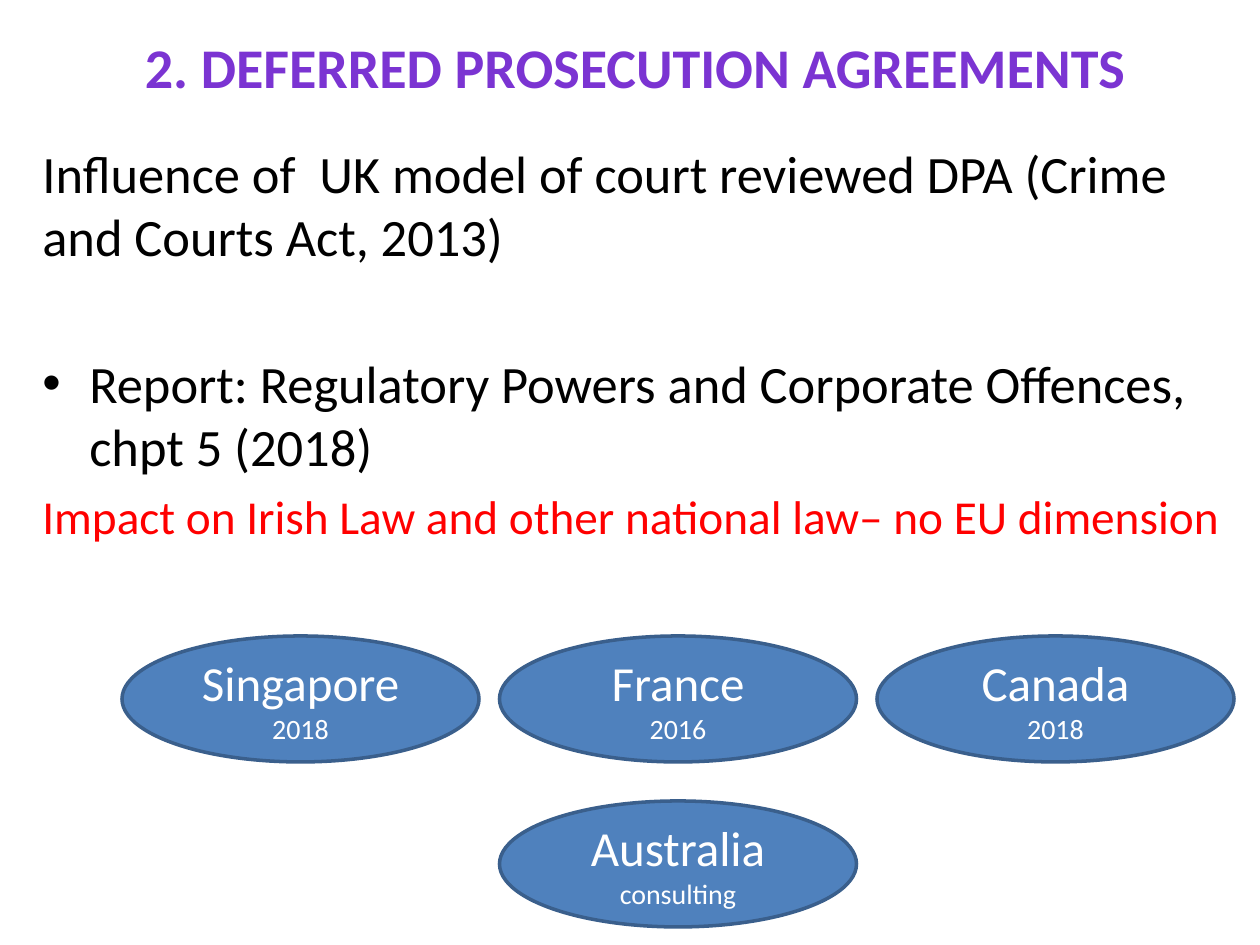
from dataclasses import dataclass

from lxml.etree import SubElement
from pptx import Presentation
from pptx.dml.color import RGBColor
from pptx.enum.shapes import MSO_SHAPE
from pptx.enum.text import MSO_ANCHOR, PP_ALIGN
from pptx.oxml.ns import qn
from pptx.util import Pt

SCALE = 914400 / 126


@dataclass(frozen=True)
class Theme:
    """Colours and type sizes of the slide."""
    font: str = "Calibri"
    ink: str = "000000"
    title: str = "7B34D2"
    alert: str = "FF0000"
    fill: str = "4F81BD"
    edge: str = "3A5F8C"
    light: str = "FFFFFF"
    head: int = 32
    body: int = 30
    note: int = 27
    name: int = 28
    year: int = 16


THEME = Theme()


def emu(*sizes):
    """Turn px lengths into EMU."""
    return [round(size * SCALE) for size in sizes]


def write(frame, text, size, color, bold=False, align=PP_ALIGN.LEFT, before=0, hang=0):
    """Add one formatted paragraph, bulleted when it has a hanging indent."""
    para = frame.paragraphs[0]
    if para.runs:
        para = frame.add_paragraph()
    para.alignment = align
    para.space_before = Pt(before)
    run = para.add_run()
    run.text = text
    font = run.font
    font.name, font.size, font.bold = THEME.font, Pt(size), bold
    font.color.rgb = RGBColor.from_string(color)
    if hang:
        indent = emu(hang)[0]
        props = para._p.get_or_add_pPr()
        props.set("marL", str(indent))
        props.set("indent", str(-indent))
        SubElement(props, qn("a:buFont"), typeface="Arial")
        SubElement(props, qn("a:buChar"), char="•")


def frame_at(slide, box):
    """Add a wrapping text box and return its frame."""
    frame = slide.shapes.add_textbox(*emu(*box)).text_frame
    frame.word_wrap = True
    return frame


def add_title(slide, box):
    """Place the centred heading."""
    write(frame_at(slide, box), "2. DEFERRED PROSECUTION AGREEMENTS", THEME.head,
          THEME.title, bold=True, align=PP_ALIGN.CENTER)


def add_body(slide, box):
    """Place the main points."""
    frame = frame_at(slide, box)
    write(frame, "Influence of  UK model of court reviewed DPA (Crime and Courts Act, 2013)",
          THEME.body, THEME.ink)
    write(frame, "Report: Regulatory Powers and Corporate Offences, chpt 5 (2018)",
          THEME.body, THEME.ink, before=48, hang=47)
    write(frame, "Impact on Irish Law and other national law– no EU dimension",
          THEME.note, THEME.alert, before=6)


def add_oval(slide, box, name, year):
    """Place one country oval with its status line."""
    oval = slide.shapes.add_shape(MSO_SHAPE.OVAL, *emu(*box))
    oval.shadow.inherit = False
    oval.fill.solid()
    oval.fill.fore_color.rgb = RGBColor.from_string(THEME.fill)
    oval.line.color.rgb = RGBColor.from_string(THEME.edge)
    oval.line.width = Pt(2)
    frame = oval.text_frame
    frame.word_wrap = True
    frame.vertical_anchor = MSO_ANCHOR.MIDDLE
    for text, size in ((name, THEME.name), (year, THEME.year)):
        write(frame, text, size, THEME.light, align=PP_ALIGN.CENTER)


def add_lands(slide, box):
    """Lay the country ovals out on a grid of three columns and two rows."""
    left, top, width, height = box
    wide, high = 357, 126
    step, drop = (width - wide) / 2, height - high
    lands = (("Singapore", "2018", 0, 0), ("France", "2016", 1, 0),
             ("Canada", "2018", 2, 0), ("Australia", "consulting", 1, 1))
    for name, year, col, row in lands:
        add_oval(slide, (left + col * step, top + row * drop, wide, high), name, year)


def main():
    """Build and save the slide."""
    deck = Presentation()
    deck.slide_width, deck.slide_height = emu(1260, 945)
    slide = deck.slides.add_slide(deck.slide_layouts[6])
    add_body(slide, (30, 135, 1211, 684))
    add_title(slide, (35, 26, 1201, 81))
    add_lands(slide, (122, 636, 1112, 291))
    deck.save("out.pptx")


if __name__ == "__main__":
    main()
